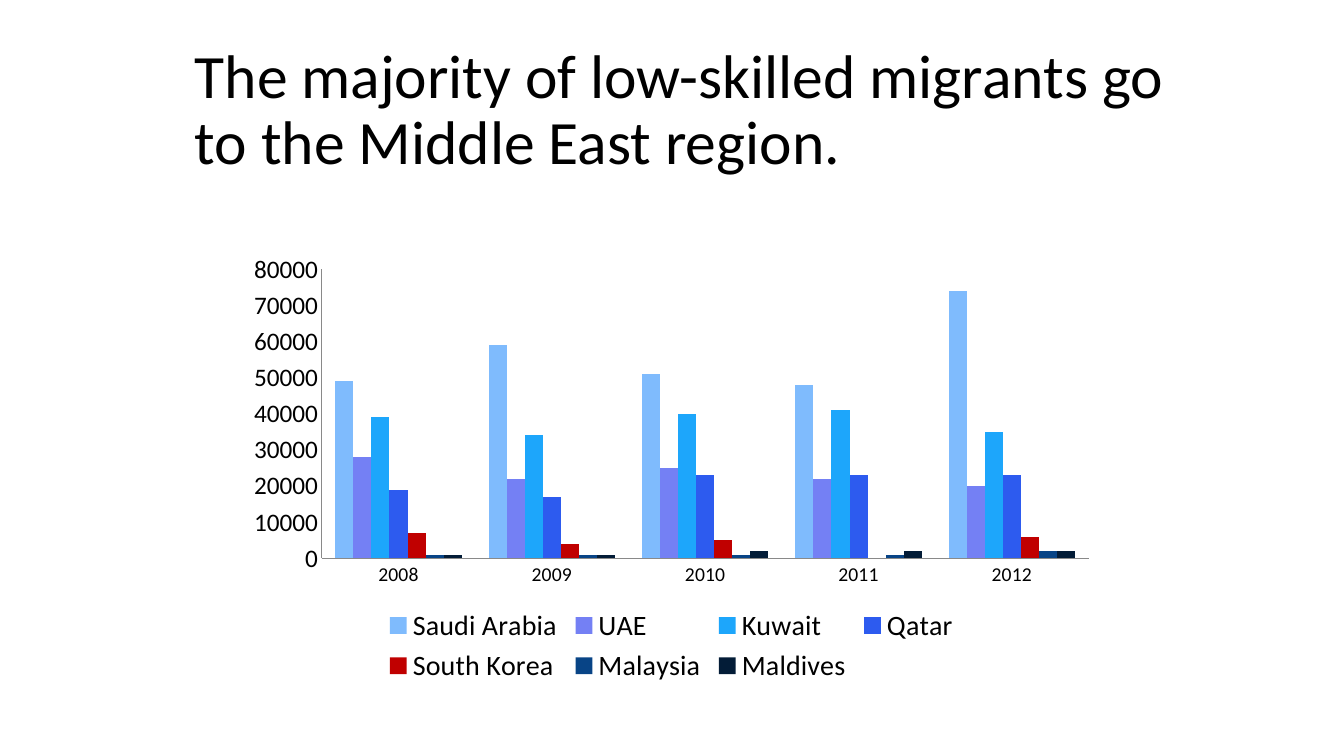
from pptx import Presentation
from pptx.chart.data import CategoryChartData
from pptx.dml.color import RGBColor
from pptx.enum.chart import XL_CHART_TYPE, XL_LEGEND_POSITION, XL_TICK_MARK
from pptx.enum.text import MSO_ANCHOR, MSO_AUTO_SIZE
from pptx.util import Pt

COLUMNS = XL_CHART_TYPE.COLUMN_CLUSTERED
LEGEND_BOTTOM = XL_LEGEND_POSITION.BOTTOM
NO_TICKS = XL_TICK_MARK.NONE
ANCHOR_TOP = MSO_ANCHOR.TOP
NO_AUTOFIT = MSO_AUTO_SIZE.NONE

FONT = "Calibri"
COLORS = {
    "text": "000000",
    "axis": "898989",
    "Saudi Arabia": "7FBBFD",
    "UAE": "7480F4",
    "Kuwait": "1DA6FB",
    "Qatar": "2D5BEF",
    "South Korea": "C00000",
    "Malaysia": "084486",
    "Maldives": "031C37",
}

YEARS = ["2008", "2009", "2010", "2011", "2012"]
MIGRANTS = {
    "Saudi Arabia": [49000, 59000, 51000, 48000, 74000],
    "UAE": [28000, 22000, 25000, 22000, 20000],
    "Kuwait": [39000, 34000, 40000, 41000, 35000],
    "Qatar": [19000, 17000, 23000, 23000, 23000],
    "South Korea": [7000, 4000, 5000, None, 6000],
    "Malaysia": [1000, 1000, 1000, 1000, 2000],
    "Maldives": [1000, 1000, 2000, 2000, 2000],
}


class SlideBuilder:
    """Holds the style and the current slide."""

    def __init__(self, slide, font_name, colors):
        self.slide = slide
        self.font_name = font_name
        self.colors = colors

    def color(self, name):
        return RGBColor.from_string(self.colors[name])

    def style_font(self, font, size):
        font.name = self.font_name
        font.size = Pt(size)
        font.color.rgb = self.color("text")

    def add_title(self, text, left, top, width, height, size, top_margin):
        shape = self.slide.shapes.add_textbox(Pt(left), Pt(top), Pt(width), Pt(height))
        frame = shape.text_frame
        frame.word_wrap = True
        frame.auto_size = NO_AUTOFIT
        frame.vertical_anchor = ANCHOR_TOP
        frame.margin_top = Pt(top_margin)
        paragraph = frame.paragraphs[0]
        paragraph.text = text
        paragraph.line_spacing = 0.9
        self.style_font(paragraph.font, size)

    def style_axis(self, axis, size):
        axis.has_major_gridlines = False
        axis.major_tick_mark = NO_TICKS
        axis.minor_tick_mark = NO_TICKS
        axis.format.line.color.rgb = self.color("axis")
        axis.format.line.width = Pt(0.75)
        self.style_font(axis.tick_labels.font, size)

    def add_column_chart(self, categories, series_values, left, top, width, height):
        data = CategoryChartData()
        data.categories = categories
        for name, values in series_values.items():
            data.add_series(name, values)
        chart = self.slide.shapes.add_chart(
            COLUMNS, Pt(left), Pt(top), Pt(width), Pt(height), data
        ).chart
        chart.has_title = False
        self.style_font(chart.font, 10)

        # Columns
        plot = chart.plots[0]
        plot.gap_width = 150
        plot.overlap = 0
        plot.vary_by_categories = False
        for series in plot.series:
            series.format.fill.solid()
            series.format.fill.fore_color.rgb = self.color(series.name)
            series.invert_if_negative = False

        # Axes
        self.style_axis(chart.category_axis, 14)
        self.style_axis(chart.value_axis, 18)
        chart.value_axis.minimum_scale = 0
        chart.value_axis.maximum_scale = 80000
        chart.value_axis.major_unit = 10000

        # Legend
        chart.has_legend = True
        chart.legend.position = LEGEND_BOTTOM
        chart.legend.include_in_layout = False
        self.style_font(chart.legend.font, 20)


def main():
    presentation = Presentation()
    presentation.slide_width = Pt(960)
    presentation.slide_height = Pt(540)
    slide = presentation.slides.add_slide(presentation.slide_layouts[6])
    builder = SlideBuilder(slide, FONT, COLORS)

    # Title
    builder.add_title(
        "The majority of low-skilled migrants go to the Middle East region.",
        left=132, top=12, width=708, height=84, size=44, top_margin=20,
    )

    # Migrants by destination and year
    builder.add_column_chart(
        YEARS, MIGRANTS, left=169, top=175, width=621, height=317
    )

    presentation.save("out.pptx")


if __name__ == "__main__":
    main()
